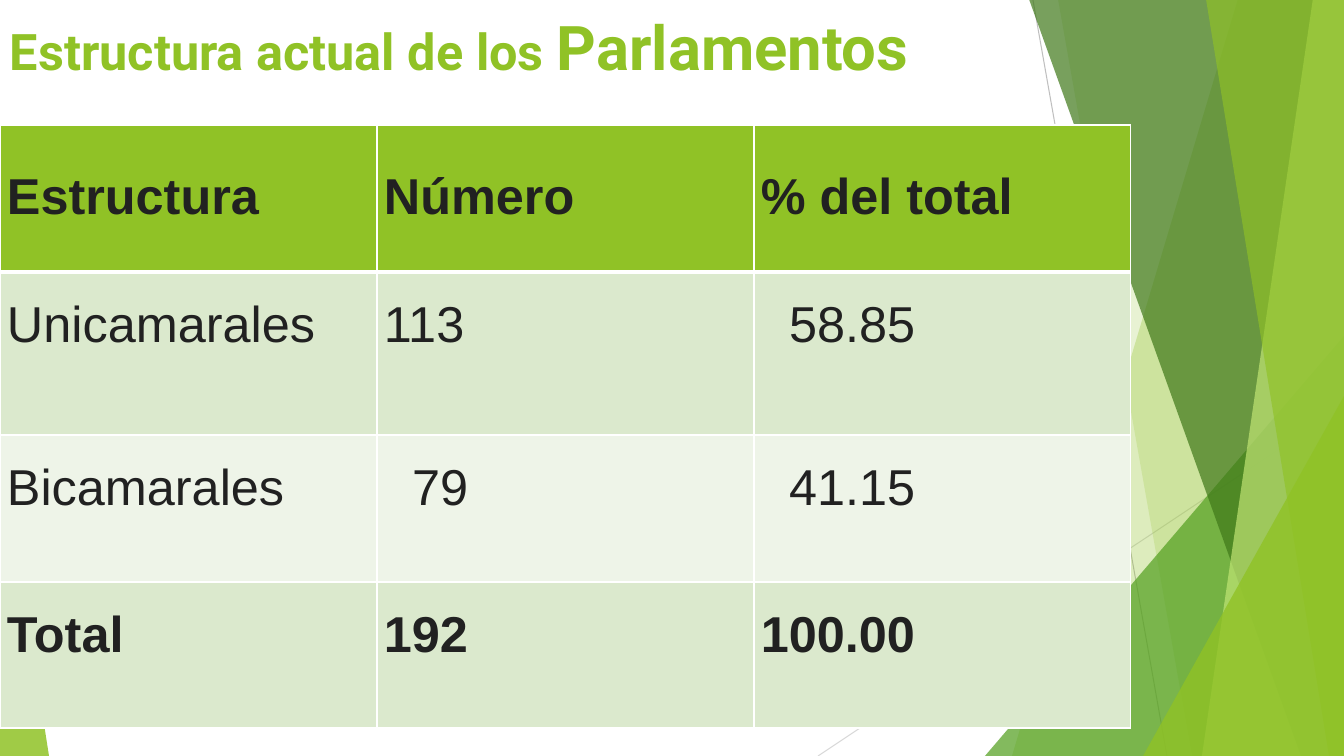
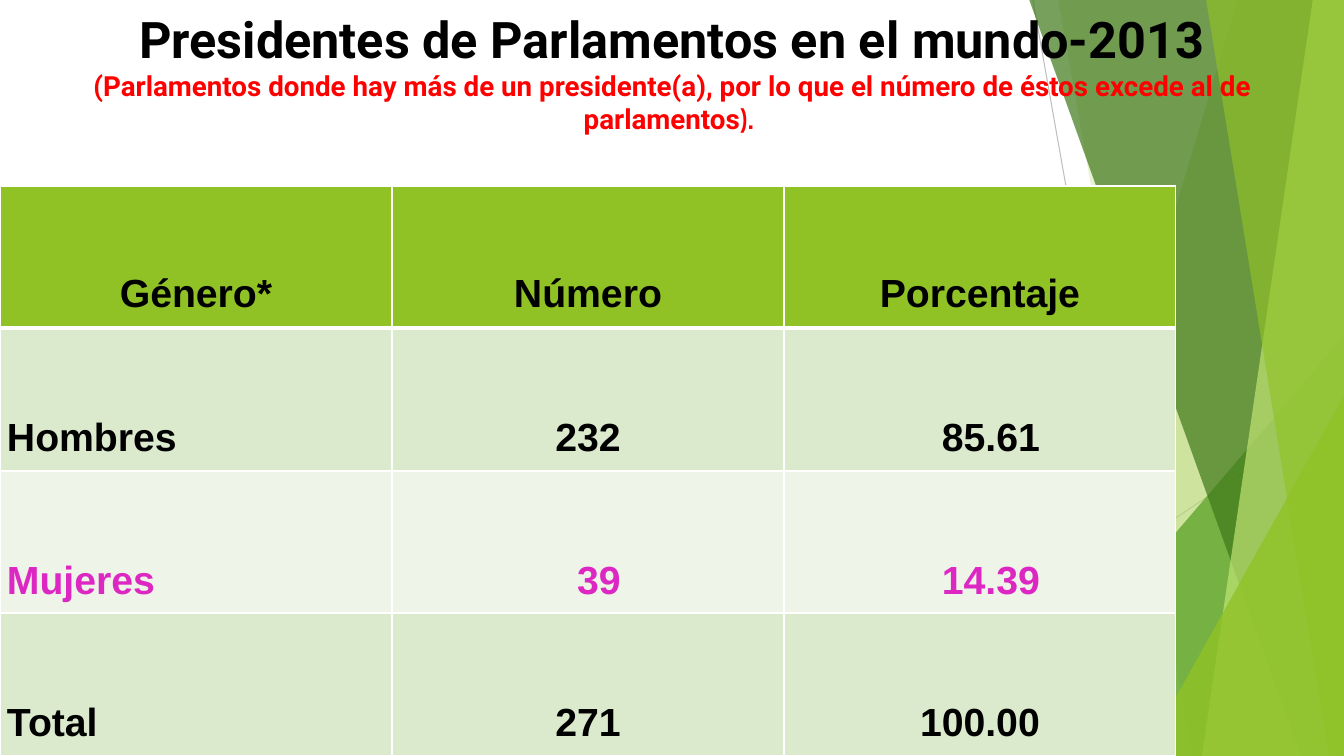
import pptx
import pptx.dml.color
import pptx.enum.shapes
import pptx.enum.text
import pptx.oxml
import pptx.oxml.ns
import pptx.util

SHAPE = pptx.enum.shapes.MSO_SHAPE
ALIGN = pptx.enum.text.PP_ALIGN
ANCHOR = pptx.enum.text.MSO_ANCHOR

EMU_PER_PX = 914400 / 100.8
PX_PER_PT = 1.4
WIDTH, HEIGHT = 1344, 756
DIGIT_WIDTH = 0.56
CELL_INSET = 7

WHITE, BLACK, RED = "FFFFFF", "000000", "FF0000"
INK, PINK = "212121", "DD27C3"
GREEN, MID_GREEN, DARK_GREEN, LIME = "90C226", "54A021", "3F7819", "C0E474"
ROW_TINTS = ["DBE9CD", "EEF4E8"]
TITLE_FONT, ACCENT_FONT, TABLE_FONT = "Roboto", "Cabin", "Arial"


def emu(px):
    return pptx.util.Emu(round(px * EMU_PER_PX))


def rgb(hex_color):
    return pptx.dml.color.RGBColor.from_string(hex_color)


def apply(target, values):
    for key, value in values.items():
        setattr(target, key, value)


def paint(shape, color, opacity):
    shape.shadow.inherit = False
    shape.line.fill.background()
    shape.fill.solid()
    shape.fill.fore_color.rgb = rgb(color)
    tint = shape.element.spPr.find(".//" + pptx.oxml.ns.qn("a:srgbClr"))
    alpha = pptx.oxml.parse_xml(
        f'<a:alpha {pptx.oxml.ns.nsdecls("a")} val="{opacity * 1000}"/>')
    tint.append(alpha)


def add_ray(slide, start, end, color):
    ray = slide.shapes.add_connector(
        pptx.enum.shapes.MSO_CONNECTOR.STRAIGHT, *map(emu, start + end))
    ray.line.color.rgb = rgb(color)
    ray.line.width = pptx.util.Pt(0.75)
    ray.element.spPr.append(
        pptx.oxml.parse_xml(f'<a:effectLst {pptx.oxml.ns.nsdecls("a")}/>'))


def add_band(slide, top_left, bottom_left, color, opacity):
    outline = slide.shapes.build_freeform(emu(top_left), emu(-1))
    corners = [(WIDTH, -1), (WIDTH, HEIGHT), (bottom_left, HEIGHT)]
    outline.add_line_segments([(emu(x), emu(y)) for x, y in corners])
    paint(outline.convert_to_shape(), color, opacity)


def add_corner(slide, left, top, width, apex, color, opacity):
    corner = slide.shapes.add_shape(
        SHAPE.ISOSCELES_TRIANGLE, emu(left), emu(top), emu(width), emu(HEIGHT - top))
    corner.adjustments[0] = apex
    paint(corner, color, opacity)


def add_facets(slide):
    add_ray(slide, (1033, 0), (1167, HEIGHT), "BFBFBF")
    add_ray(slide, (WIDTH, 406), (818, HEIGHT), "D9D9D9")
    add_band(slide, 1238, 1012, GREEN, 30)
    add_band(slide, 1058, 1192, GREEN, 20)
    add_corner(slide, 985, 336, 359, 1, MID_GREEN, 72)
    add_band(slide, 1029, 1301, DARK_GREEN, 70)
    add_band(slide, 1313, 1202, LIME, 70)
    add_band(slide, 1206, 1329, GREEN, 65)
    add_corner(slide, 1143, 396, 201, 1, GREEN, 80)
    add_corner(slide, 0, 443, 49, 0, GREEN, 85)


def move_to_layout(slide):
    layout = slide.slide_layout
    for placeholder in list(layout.placeholders):
        layout.shapes.element.remove(placeholder.element)
    for facet in list(slide.shapes):
        layout.shapes.element.append(facet.element)


def write(paragraph, text, size, color, font, bold=True):
    run = paragraph.add_run()
    run.text = text
    apply(run.font, {"size": pptx.util.Pt(size), "name": font, "bold": bold})
    run.font.color.rgb = rgb(color)


def add_title(slide, top, height, align, lines):
    frame = slide.shapes.add_textbox(0, emu(top), emu(WIDTH), emu(height)).text_frame
    apply(frame, {"word_wrap": True, "vertical_anchor": ANCHOR.TOP})
    for index, line in enumerate(lines):
        paragraph = frame.add_paragraph() if index else frame.paragraphs[0]
        paragraph.alignment = align
        for text, size, color, font in line:
            write(paragraph, text, size, color, font)


def style_cell(cell, fill, is_header):
    cell.fill.solid()
    cell.fill.fore_color.rgb = rgb(fill)
    properties = cell._tc.get_or_add_tcPr()
    for index, side in enumerate("LRTB"):
        points = 3 if is_header and side == "B" else 1
        properties.insert(index, pptx.oxml.parse_xml(
            f'<a:ln{side} {pptx.oxml.ns.nsdecls("a")} w="{points * 12700}">'
            f'<a:solidFill><a:srgbClr val="{WHITE}"/></a:solidFill></a:ln{side}>'))


def add_data_table(slide, top, column_width, row_heights, rows, size, drops,
                   colors, bold_rows, centered):
    columns = len(rows[0])
    table = slide.shapes.add_table(
        len(rows), columns, 0, emu(top),
        emu(column_width * columns), emu(sum(row_heights))).table
    for column in table.columns:
        column.width = emu(column_width)
    for r, values in enumerate(rows):
        table.rows[r].height = emu(row_heights[r])
        for c, text in enumerate(values):
            cell = table.cell(r, c)
            style_cell(cell, ROW_TINTS[(r - 1) % 2] if r else GREEN, r == 0)
            is_short = r and c and len(text) < len(rows[-1][c])
            indent = size * PX_PER_PT * DIGIT_WIDTH if is_short else 0
            apply(cell, {
                "margin_left": emu(CELL_INSET + indent),
                "margin_right": emu(CELL_INSET),
                "margin_top": emu(drops[min(r, 1)]),
                "margin_bottom": 0,
                "vertical_anchor": ANCHOR.TOP,
            })
            paragraph = cell.text_frame.paragraphs[0]
            is_label = r and c == 0
            paragraph.alignment = ALIGN.CENTER if centered and not is_label else ALIGN.JUSTIFY
            write(paragraph, text, size, colors[r], TABLE_FONT, r in bold_rows)


def build_structure(slide):
    add_title(slide, 4, 121, ALIGN.LEFT, [[
        ("Estructura actual de los ", 36, GREEN, TITLE_FONT),
        ("Parlamentos", 44, GREEN, TITLE_FONT),
    ]])
    rows = [
        ("Estructura", "Número", "% del total"),
        ("Unicamarales", "113", "58.85"),
        ("Bicamarales", "79", "41.15"),
        ("Total", "192", "100.00"),
    ]
    add_data_table(slide, 125, 377, [147, 163, 147, 146], rows, 36, (44, 25),
                   [INK] * 4, {0, 3}, centered=False)


def build_presidents(slide):
    add_title(slide, 3, 132, ALIGN.CENTER, [
        [("Presidentes de Parlamentos en el mundo-2013", 36, BLACK, TITLE_FONT)],
        [("(Parlamentos donde hay más de un presidente(a), por lo que el número "
          "de éstos excede al de parlamentos", 19.8, RED, TITLE_FONT),
         ("). ", 19.8, RED, ACCENT_FONT)],
    ])
    rows = [
        ("Género*", "Número", "Porcentaje"),
        ("Hombres", "232", "85.61"),
        ("Mujeres", "39", "14.39"),
        ("Total", "271", "100.00"),
    ]
    add_data_table(slide, 186, 392, [142, 143, 142, 143], rows, 28, (86, 88),
                   [BLACK, BLACK, PINK, BLACK], {0, 1, 2, 3}, centered=True)


def main():
    deck = pptx.Presentation()
    apply(deck, {"slide_width": emu(WIDTH), "slide_height": emu(HEIGHT)})
    blank = deck.slide_layouts[6]
    structure = deck.slides.add_slide(blank)
    add_facets(structure)
    move_to_layout(structure)
    build_structure(structure)
    build_presidents(deck.slides.add_slide(blank))
    deck.save("out.pptx")


if __name__ == "__main__":
    main()
